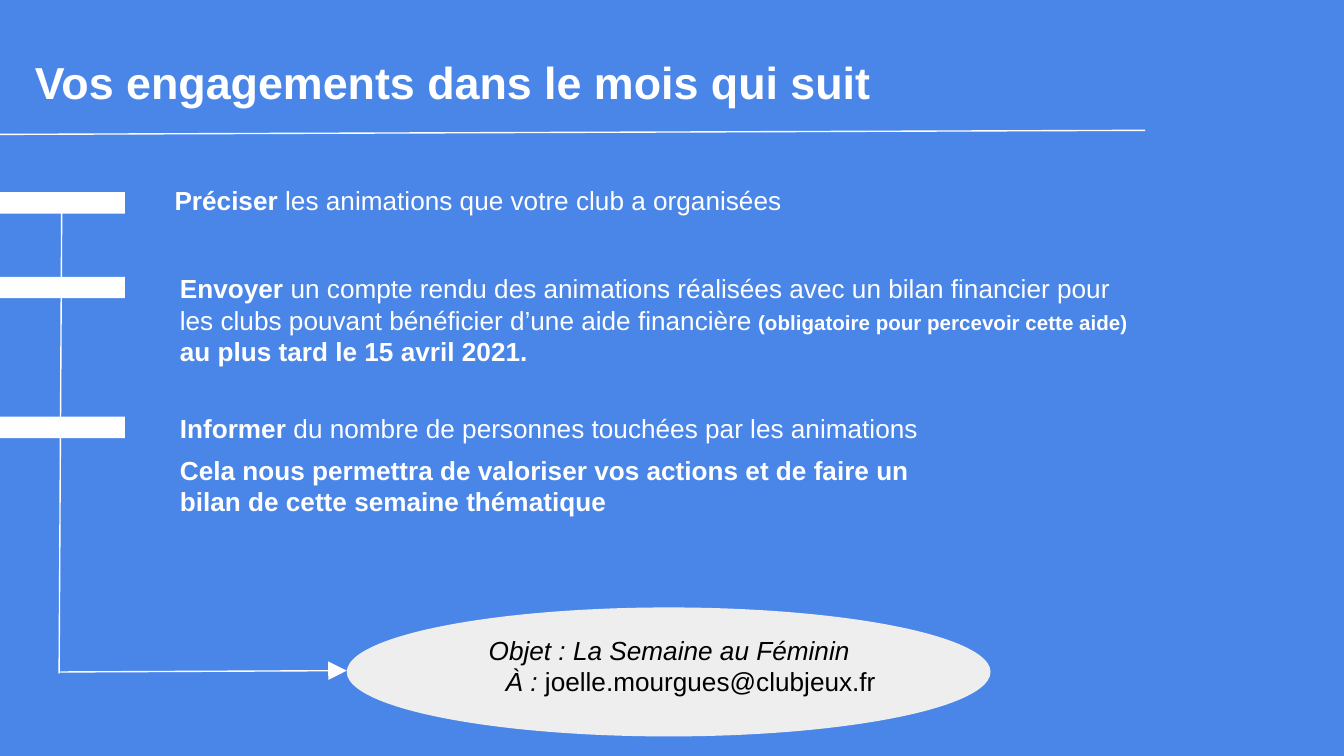
from pptx import Presentation, util as u
from pptx.dml.color import RGBColor
from pptx.enum import shapes, text
from pptx.oxml.ns import qn
from lxml import etree

HUES = {"back": "4A86E8", "main": "FFFFFF", "oval": "EEEEEE", "ink": "000000"}
FONT = "Arial"
COLS = 100  # grid cells of a tenth of an inch
ROWS = COLS * 9 / 16

deck = Presentation()
deck.slide_width = u.Inches(10)
deck.slide_height = u.Emu(deck.slide_width * 9 // 16)


def hue(name):
    return RGBColor.from_string(HUES[name])


def grid(*cells):
    """Turn alternating columns and rows into slide lengths."""
    units = (deck.slide_width / COLS, deck.slide_height / ROWS)
    return [u.Emu(round(c * units[i % 2])) for i, c in enumerate(cells)]


def place(shape, box):
    shape.left, shape.top, shape.width, shape.height = grid(*box)


def write(shape, paras, ink="main", align=text.PP_ALIGN.LEFT):
    """Fill a shape with paragraphs of (words, size, style) runs."""
    frame = shape.text_frame
    frame.word_wrap = True
    frame.auto_size = text.MSO_AUTO_SIZE.NONE
    frame.vertical_anchor = text.MSO_ANCHOR.TOP
    inset = u.Inches(0.1)
    frame.margin_left = frame.margin_right = inset
    frame.margin_top = frame.margin_bottom = inset
    for i, runs in enumerate(paras):
        para = frame.paragraphs[0] if i == 0 else frame.add_paragraph()
        para.alignment = align
        for words, size, style in runs:
            run = para.add_run()
            run.text = words
            font = run.font
            font.name, font.size = FONT, u.Pt(size)
            font.bold, font.italic = style == "b", style == "i"
            font.color.rgb = hue(ink)
    return frame


def add_text(slide, box, paras, **look):
    return write(slide.shapes.add_textbox(*grid(*box)), paras, **look)


def add_form(slide, kind, box, fill):
    form = slide.shapes.add_shape(kind, *grid(*box))
    form.shadow.inherit = False
    form.fill.solid()
    form.fill.fore_color.rgb = hue(fill)
    form.line.fill.background()


def add_line(slide, ends, arrow=False):
    line = slide.shapes.add_connector(shapes.MSO_CONNECTOR.STRAIGHT, *grid(*ends))
    line.line.color.rgb = hue("main")
    line.line.width = u.Pt(0.75)
    props = line._element.spPr
    if arrow:
        etree.SubElement(props.find(qn("a:ln")), qn("a:tailEnd"),
                         type="triangle", w="lg", len="lg")
    etree.SubElement(props, qn("a:effectLst"))


def add_head(slide, box):
    x, y, w, h = box
    title = slide.shapes.title
    place(title, (x + 1.6, y, w, h))
    write(title, [[("Vos engagements dans le mois qui suit", 24, "b")]])
    add_line(slide, (x, y + 6.9, x + 85.2, y + 6.6))


def add_step(slide, box, paras, inset=12.4, lift=1.3):
    """Place a bar at the left edge, with its text beside it."""
    x, y, w, h = box
    add_form(slide, shapes.MSO_SHAPE.RECTANGLE, (x, y, 9.3, 1.6), "main")
    add_text(slide, (x + inset, y - lift, w, h), paras)


def add_path(slide, box):
    """Draw the line down past the steps, then the arrow to the right."""
    x, y, w, h = box
    add_line(slide, (x + 0.2, y, x, y + h))
    add_line(slide, (x + 0.1, y + h - 0.1, x + w, y + h - 0.2), arrow=True)


def add_mail(slide, box):
    x, y, w, h = box
    add_form(slide, shapes.MSO_SHAPE.OVAL, box, "oval")
    frame = add_text(slide, (x - 4.9, y + 1, w + 9.9, 6.1), [
        [("Objet : La Semaine au Féminin", 14, "i")],
        [("À : ", 14, "i"), ("joelle.mourgues@clubjeux.fr", 14, "")],
    ], ink="ink", align=text.PP_ALIGN.CENTER)
    props = frame.paragraphs[1]._p.get_or_add_pPr()
    props.set("marL", str(u.Inches(0.32)))
    props.set("indent", "0")


def build():
    slide = deck.slides.add_slide(deck.slide_layouts[5])
    slide.background.fill.solid()
    slide.background.fill.fore_color.rgb = hue("back")

    add_head(slide, (0, 3.1, 94.2, 6.1))
    add_step(slide, (0, 14.3, 58.9, 4.8), [[
        ("Préciser", 14, "b"),
        (" les animations que votre club a organisées", 14, ""),
    ]], inset=12, lift=1.6)
    add_step(slide, (0, 20.6, 74.5, 7.7), [
        [("Envoyer ", 14, "b"),
         ("un compte rendu des animations réalisées avec un bilan financier pour", 14, "")],
        [("les clubs pouvant bénéficier d’une aide financière", 14, ""),
         (" (obligatoire pour percevoir cette aide) ", 11, "b"),
         ("au plus tard le 15 avril 2021.", 14, "b")],
    ])
    add_step(slide, (0, 31, 58.9, 4.8), [[
        ("Informer", 14, "b"),
        (" du nombre de personnes touchées par les animations", 14, ""),
    ]])
    add_text(slide, (12.4, 32.8, 58.9, 6.1), [[
        ("Cela nous permettra de valoriser vos actions et de faire un "
         "bilan de cette semaine thématique", 14, "b"),
    ]])
    add_path(slide, (4.4, 14.3, 21.4, 35.8))
    add_mail(slide, (25.8, 45.2, 47.9, 9.6))
    deck.save("out.pptx")


if __name__ == "__main__":
    build()
